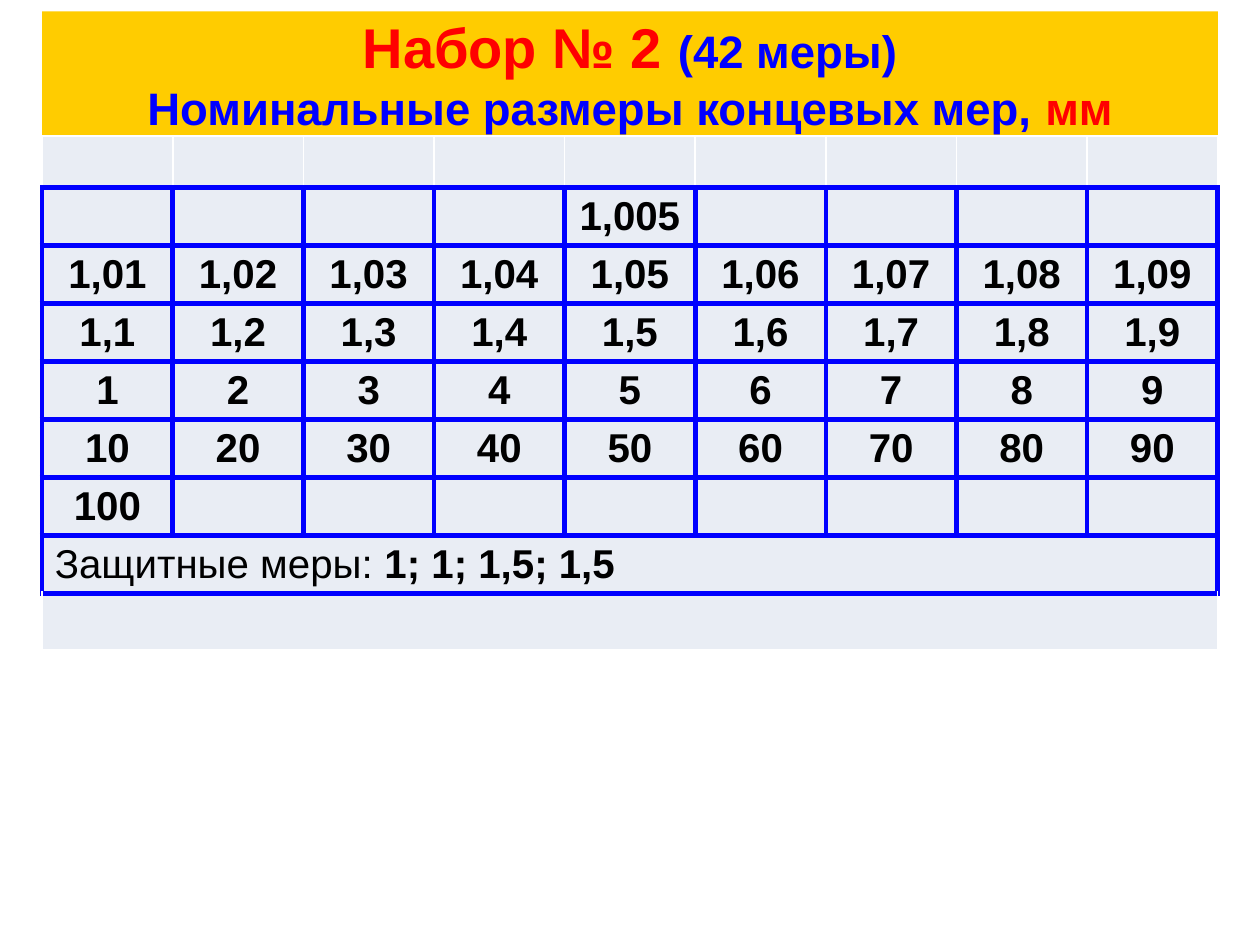
from dataclasses import dataclass

import lxml.etree
import pptx
import pptx.dml.color
import pptx.enum.text
import pptx.oxml.ns
import pptx.util

Cm = pptx.util.Cm
Pt = pptx.util.Pt
PP_ALIGN = pptx.enum.text.PP_ALIGN
MIDDLE = pptx.enum.text.MSO_ANCHOR.MIDDLE


@dataclass(frozen=True)
class Theme:
    font: str = "Arial"
    banner: str = "FFCC00"
    accent: str = "FF0000"
    blue: str = "0000FF"
    text: str = "000000"
    cell: str = "E9EDF4"
    faint: str = "FFFFFF"
    heading_size: int = 32
    subheading_size: int = 26
    body_size: int = 23
    grid_width: int = 3
    faint_width: int = 1


def rgb(color):
    return pptx.dml.color.RGBColor.from_string(color)


class GaugeSlide:
    def __init__(self, presentation, theme):
        self.theme = theme
        self.slide = presentation.slides.add_slide(presentation.slide_layouts[5])

    def title(self, lines, left, top, width, height):
        banner = self.slide.shapes.title
        banner.left, banner.top = Cm(left), Cm(top)
        banner.width, banner.height = Cm(width), Cm(height)
        banner.fill.solid()
        banner.fill.fore_color.rgb = rgb(self.theme.banner)
        frame = banner.text_frame
        frame.auto_size = pptx.enum.text.MSO_AUTO_SIZE.NONE
        frame.word_wrap = True
        frame.vertical_anchor = MIDDLE
        heading = frame.paragraphs[0]
        heading.alignment = PP_ALIGN.CENTER
        heading.font.name = self.theme.font
        heading.font.bold = True
        for index, line in enumerate(lines):
            if index:
                heading.add_line_break()
            for words, size, color in line:
                part = heading.add_run()
                part.text = words
                part.font.size = Pt(size)
                part.font.color.rgb = rgb(color)

    def table(self, heights, columns, left, top, width):
        grid = self.slide.shapes.add_table(
            len(heights), columns, Cm(left), Cm(top), Cm(width), Cm(sum(heights))
        ).table
        grid.first_row = False
        grid.horz_banding = False
        for row, height in zip(grid.rows, heights):
            row.height = Cm(height)
        return grid

    def cell(self, cell, borders):
        properties = cell._tc.get_or_add_tcPr()
        for side in "LRTB":
            if side in borders:
                color, width = borders[side]
                line = lxml.etree.SubElement(
                    properties, pptx.oxml.ns.qn(f"a:ln{side}"), w=str(Pt(width))
                )
                fill = lxml.etree.SubElement(line, pptx.oxml.ns.qn("a:solidFill"))
                lxml.etree.SubElement(fill, pptx.oxml.ns.qn("a:srgbClr"), val=color)
        cell.fill.solid()
        cell.fill.fore_color.rgb = rgb(self.theme.cell)
        cell.margin_top = cell.margin_bottom = Cm(0.12)
        cell.vertical_anchor = MIDDLE

    def cell_text(self, cell, parts, alignment):
        entry = cell.text_frame.paragraphs[0]
        entry.alignment = alignment
        entry.font.name = self.theme.font
        entry.font.size = Pt(self.theme.body_size)
        entry.font.color.rgb = rgb(self.theme.text)
        for words, bold in parts:
            part = entry.add_run()
            part.text = words
            part.font.bold = bold


def main():
    theme = Theme()
    presentation = pptx.Presentation()
    presentation.slide_width, presentation.slide_height = Cm(25.4), Cm(19.05)
    page = GaugeSlide(presentation, theme)
    left, width, title_top, title_height = 0.85, 23.7, 0.23, 2.51
    page.title(
        [
            [
                ("Набор № 2 ", theme.heading_size, theme.accent),
                ("(42 меры)", theme.subheading_size, theme.blue),
            ],
            [
                ("Номинальные размеры концевых мер, ", theme.subheading_size, theme.blue),
                ("мм", theme.subheading_size, theme.accent),
            ],
        ],
        left, title_top, width, title_height,
    )

    digits = range(1, 10)
    sizes = [
        [""] * 4 + ["1,005"] + [""] * 4,
        [f"1,0{digit}" for digit in digits],
        [f"1,{digit}" for digit in digits],
        [f"{digit}" for digit in digits],
        [f"{digit}0" for digit in digits],
        ["100"] + [""] * 8,
    ]
    heights = [1.04] + [1.17] * (len(sizes) + 1) + [1.13]
    gauges = page.table(heights, len(digits), left, title_top + title_height, width)
    protective, footer = len(heights) - 2, len(heights) - 1
    for row in (protective, footer):
        gauges.cell(row, 0).merge(gauges.cell(row, len(digits) - 1))

    blue = (theme.blue, theme.grid_width)
    white = (theme.faint, theme.faint_width)
    borders = {0: {"L": white, "R": white, "T": white, "B": blue}, footer: {"T": blue}}
    for row in range(len(heights)):
        for column in range(len(digits)):
            page.cell(gauges.cell(row, column), borders.get(row, dict.fromkeys("LRTB", blue)))

    for row, values in enumerate(sizes, start=1):
        for column, value in enumerate(values):
            if value:
                page.cell_text(gauges.cell(row, column), [(value, True)], PP_ALIGN.CENTER)
    page.cell_text(
        gauges.cell(protective, 0),
        [("Защитные меры:", False), (" 1; 1; 1,5; 1,5", True)],
        PP_ALIGN.LEFT,
    )
    presentation.save("out.pptx")


if __name__ == "__main__":
    main()
